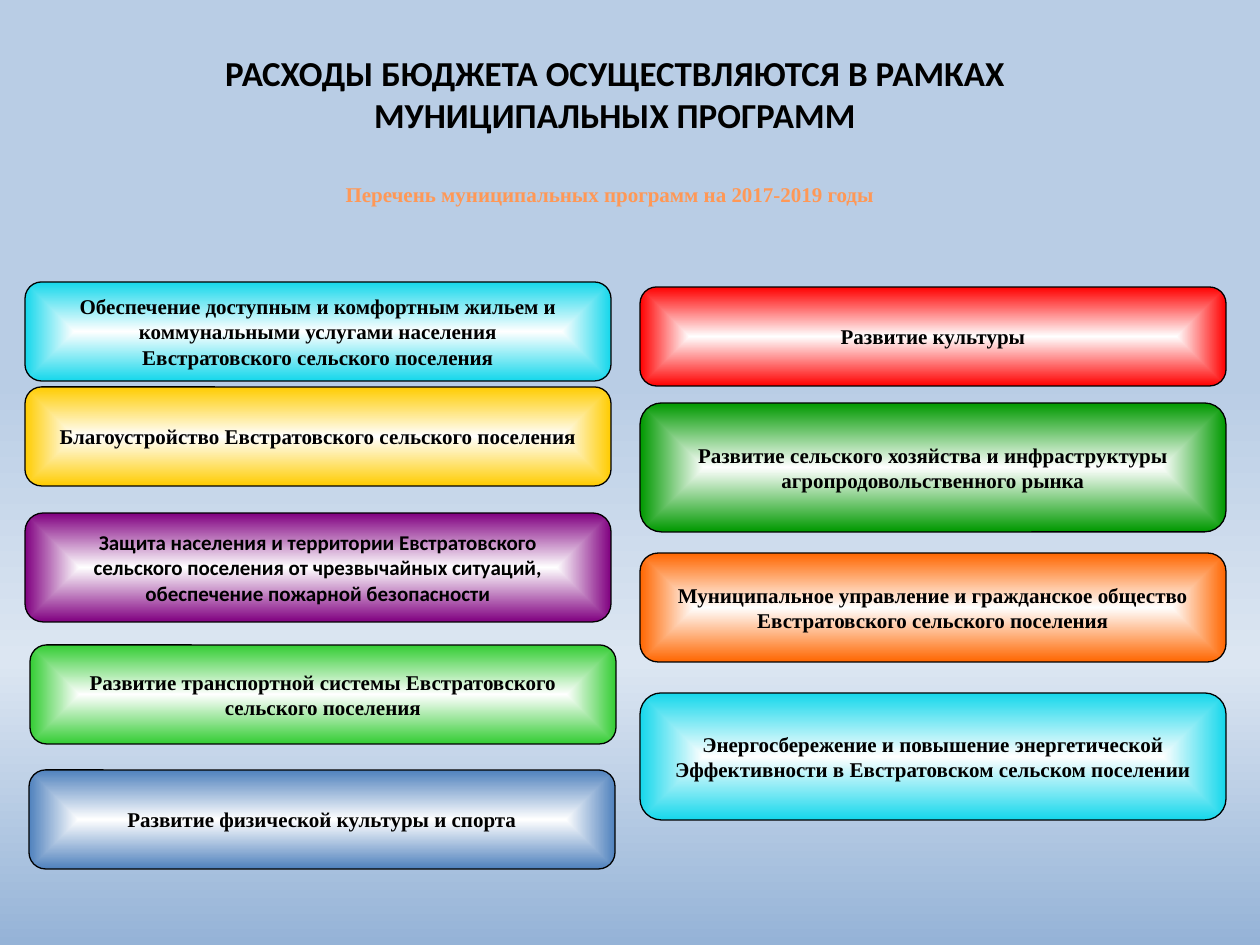
from dataclasses import dataclass

from pptx import Presentation
from pptx.dml.color import RGBColor
from pptx.enum.shapes import MSO_SHAPE as Preset
from pptx.enum.text import MSO_ANCHOR as Anchor, PP_ALIGN as Align
from pptx.oxml import parse_xml
from pptx.oxml.ns import nsdecls, qn
from pptx.util import Pt

EMU_PER_PX = 914400 / 126
SERIF = "Times New Roman"
SANS = "Calibri"
BLACK = "000000"
LEFT_X, RIGHT_X = 25, 640
CARD_WIDTH = 586
LINEAR = '<a:lin ang="5400000" scaled="0"/>'
FROM_CENTRE = ('<a:path path="shape"><a:fillToRect l="50000" t="50000" '
               'r="50000" b="50000"/></a:path>')


@dataclass
class Program:
    name: str
    x: int
    y: int
    height: int
    colour: str
    font: str = SERIF
    wrap: bool = True


PROGRAMS = [
    Program("Обеспечение доступным и комфортным жильем и\n"
            "коммунальными услугами населения\n"
            "Евстратовского сельского поселения",
            LEFT_X, 282, 99, "15D7EB", wrap=False),
    Program("Благоустройство Евстратовского сельского поселения",
            LEFT_X, 387, 99, "FFCC00", wrap=False),
    Program("Защита населения и территории Евстратовского\n"
            "сельского поселения от чрезвычайных ситуаций,\n"
            "обеспечение пожарной безопасности",
            LEFT_X, 513, 109, "800080", SANS),
    Program("Развитие транспортной системы Евстратовского сельского поселения",
            LEFT_X + 5, 645, 99, "33CC33"),
    Program("Развитие физической культуры и спорта",
            LEFT_X + 4, 770, 99, "4F81BD"),
    Program("Развитие культуры", RIGHT_X, 287, 99, "FF0000"),
    Program("Развитие сельского хозяйства и инфраструктуры "
            "агропродовольственного рынка", RIGHT_X, 403, 129, "009900"),
    Program("Муниципальное управление и гражданское общество "
            "Евстратовского сельского поселения", RIGHT_X, 553, 109, "FF6600"),
    Program("Энергосбережение и повышение энергетической\n"
            "Эффективности в Евстратовском сельском поселении",
            RIGHT_X, 693, 127, "15D7EB", wrap=False),
]


def px(length: int) -> int:
    return round(length * EMU_PER_PX)


def rgb(colour: str) -> RGBColor:
    return RGBColor.from_string(colour)


def set_gradient(fill, properties, stops: list, direction: str) -> None:
    fill.solid()
    stop_list = "".join(
        f'<a:gs pos="{percent * 1000}"><a:srgbClr val="{colour}"/></a:gs>'
        for percent, colour in stops)
    gradient = parse_xml(
        f'<a:gradFill {nsdecls("a")} rotWithShape="1">'
        f'<a:gsLst>{stop_list}</a:gsLst>{direction}</a:gradFill>')
    properties.replace(properties.find(qn("a:solidFill")), gradient)


def write(frame, text: str, size: int, font: str, colour: str, wrap: bool) -> None:
    frame.text = text
    frame.word_wrap = wrap
    for paragraph in frame.paragraphs:
        paragraph.alignment = Align.CENTER
        for run in paragraph.runs:
            run.font.size = Pt(size)
            run.font.name = font
            run.font.bold = True
            run.font.color.rgb = rgb(colour)


def add_heading(slide, box: tuple, text: str, size: int, font: str,
                colour: str, wrap: bool) -> None:
    heading = slide.shapes.add_textbox(*map(px, box))
    write(heading.text_frame, text, size, font, colour, wrap)


def add_program(slide, program: Program) -> None:
    card = slide.shapes.add_shape(
        Preset.ROUNDED_RECTANGLE, px(program.x), px(program.y),
        px(CARD_WIDTH), px(program.height))
    card.shadow.inherit = False
    set_gradient(card.fill, card.element.spPr,
                 [(0, "FFFFFF"), (100, program.colour)], FROM_CENTRE)
    card.line.color.rgb = rgb(BLACK)
    card.line.width = Pt(0.75)
    card.text_frame.vertical_anchor = Anchor.MIDDLE
    write(card.text_frame, program.name, 12, program.font, BLACK, program.wrap)


def main() -> None:
    deck = Presentation()
    deck.slide_width, deck.slide_height = px(1260), px(945)
    slide = deck.slides.add_slide(deck.slide_layouts[6])
    background = slide.background.fill
    background.solid()
    set_gradient(background, slide.element.find(".//" + qn("p:bgPr")),
                 [(0, "B9CDE5"), (40, "B9CDE5"), (70, "DCE6F2"), (100, "95B3D7")],
                 LINEAR)
    add_heading(slide, (74, 45, 1082, 97),
                "РАСХОДЫ БЮДЖЕТА ОСУЩЕСТВЛЯЮТСЯ В РАМКАХ МУНИЦИПАЛЬНЫХ ПРОГРАММ",
                20, SANS, BLACK, True)
    add_heading(slide, (99, 175, 1022, 59),
                "Перечень муниципальных программ на 2017-2019 годы",
                12, SERIF, "FF9856", False)
    for program in PROGRAMS:
        add_program(slide, program)
    deck.save("out.pptx")


if __name__ == "__main__":
    main()
